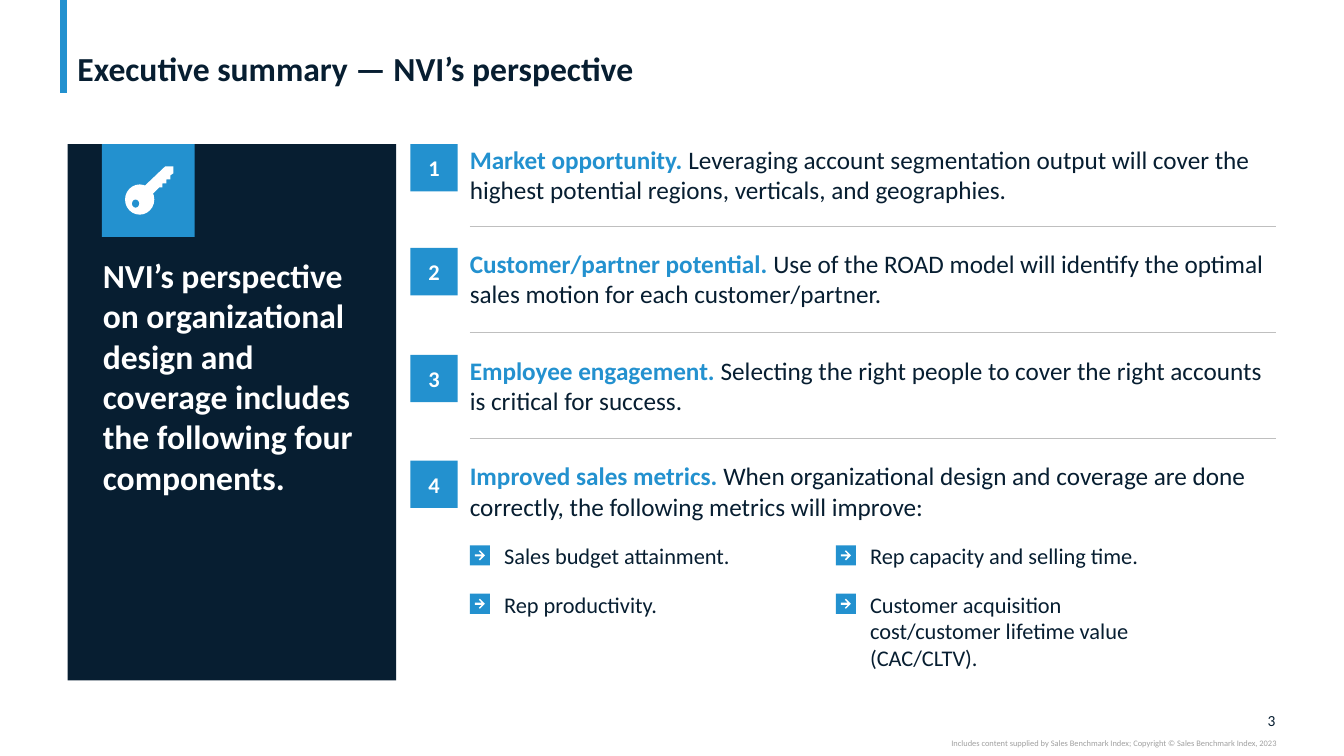
from lxml.etree import SubElement
from pptx import Presentation
from pptx.dml.color import RGBColor
from pptx.enum.shapes import MSO_CONNECTOR, MSO_SHAPE
from pptx.enum.text import MSO_ANCHOR, PP_ALIGN
from pptx.oxml.ns import qn
from pptx.util import Pt

PX = 9144  # EMU per px, 100 px to the inch
COLORS = {"navy": "071E31", "blue": "2391CF", "white": "FFFFFF",
          "rule": "BFBFBF", "gray": "A0A0A0"}


class Deck:
    font = "Calibri"

    def __init__(self, width, height):
        self.prs = Presentation()
        self.prs.slide_width, self.prs.slide_height = width * PX, height * PX
        self.s = self.prs.slides.add_slide(self.prs.slide_layouts[6])

    def color(self, name):
        return RGBColor.from_string(COLORS[name])

    def paint(self, sp, fill):
        sp.shadow.inherit = False
        sp.fill.solid()
        sp.fill.fore_color.rgb = self.color(fill)
        sp.line.fill.background()
        return sp

    def shape(self, x, y, w, h, fill, kind=MSO_SHAPE.RECTANGLE):
        box = (v * PX for v in (x, y, w, h))
        return self.paint(self.s.shapes.add_shape(kind, *box), fill)

    def outline(self, x, y, points, fill):
        points = [(x + dx, y + dy) for dx, dy in points]
        builder = self.s.shapes.build_freeform(*points[0], scale=PX)
        builder.add_line_segments(points[1:], close=True)
        return self.paint(builder.convert_to_shape(), fill)

    def line(self, x1, y1, x2, y2, color, width):
        ends = (v * PX for v in (x1, y1, x2, y2))
        cn = self.s.shapes.add_connector(MSO_CONNECTOR.STRAIGHT, *ends)
        cn.line.color.rgb = self.color(color)
        cn.line.width = Pt(width)
        SubElement(cn._element.spPr, qn("a:effectLst"))

    def label(self, sp, runs, size, align=PP_ALIGN.LEFT, anchor=MSO_ANCHOR.TOP,
              insets=(0, 0, 0, 0)):
        """Fill a shape with runs of (text, color, bold)."""
        tf = sp.text_frame
        tf.word_wrap = True
        tf.vertical_anchor = anchor
        (tf.margin_left, tf.margin_top,
         tf.margin_right, tf.margin_bottom) = (v * PX for v in insets)
        p = tf.paragraphs[0]
        p.alignment = align
        for text, color, bold in runs:
            r = p.add_run()
            r.text = text
            r.font.name, r.font.size, r.font.bold = self.font, Pt(size), bold
            r.font.color.rgb = self.color(color)
        return p

    def text(self, x, y, w, h, runs, size, **style):
        sp = self.s.shapes.add_textbox(*(v * PX for v in (x, y, w, h)))
        return self.label(sp, runs, size, **style)


LEFT, TOP, TEXT_X, RIGHT = 67, 143, 466, 1266
POINTS = [
    (143, "Market opportunity. ", "Leveraging account segmentation output will "
     "cover the highest potential regions, verticals, and geographies."),
    (246, "Customer/partner potential. ", "Use of the ROAD model will identify "
     "the optimal sales motion for each customer/partner."),
    (352, "Employee engagement. ", "Selecting the right people to cover the "
     "right accounts is critical for success."),
    (457, "Improved sales metrics. ", "When organizational design and coverage "
     "are done correctly, the following metrics will improve:"),
]
METRICS = [
    ["Sales budget attainment.", "Rep productivity."],
    ["Rep capacity and selling time.",
     "Customer acquisition cost/customer lifetime value (CAC/CLTV)."],
]
ARROW = [(0, 4), (7, 4), (4, 1), (5, 0), (10, 5), (5, 10), (4, 9), (7, 6), (0, 6)]
KEY_SHAFT = [(14, 33), (28, 27), (34, 21), (37, 21), (37, 17), (41, 17), (41, 13),
             (45, 13), (45, 9), (48, 7), (48, 0), (40, 0), (20, 19)]


def main():
    d = Deck(1333, 750)

    # Title and footer
    d.line(63, 0, 63, 92, "blue", 5)
    title = d.text(LEFT, 4, 1199, 84,
                   [("Executive summary — NVI’s perspective", "navy", True)], 24,
                   anchor=MSO_ANCHOR.BOTTOM, insets=(10, 0, 10, 0))
    title.line_spacing = 0.9
    d.text(1232, 705, 33, 19, [("3", "navy", False)], 11,
           align=PP_ALIGN.RIGHT, anchor=MSO_ANCHOR.MIDDLE)
    d.text(750, 732, 516, 10,
           [("Includes content supplied by Sales Benchmark Index; "
             "Copyright © Sales Benchmark Index, 2023", "gray", False)], 6,
           align=PP_ALIGN.RIGHT)

    # Side panel with key icon
    panel = d.shape(LEFT, TOP, 326, 532, "navy")
    d.label(panel, [("NVI’s perspective on organizational design and coverage "
                     "includes the following four components.", "white", True)],
            24, insets=(35, 110, 35, 8))
    d.shape(101, TOP, 92, 92, "blue")
    d.shape(124, 183, 29, 30, "white", MSO_SHAPE.OVAL)
    d.outline(124, 165, KEY_SHAFT, "white")
    d.shape(131, 198, 7, 8, "blue", MSO_SHAPE.OVAL)

    # Numbered points
    for number, (y, lead, body) in enumerate(POINTS, 1):
        d.text(TEXT_X, y, 800, 61,
               [(lead, "blue", True), (body, "navy", False)], 18)
        d.label(d.shape(407, y, 47, 47, "blue"), [(str(number), "white", True)],
                16, align=PP_ALIGN.CENTER, anchor=MSO_ANCHOR.MIDDLE)

    # Rules between the points
    for i in range(len(POINTS) - 1):
        y = 225 + 105 * i
        d.line(TEXT_X, y, RIGHT, y, "rule", 0.5)

    # Metrics with arrow markers
    for col, metrics in enumerate(METRICS):
        for row, metric in enumerate(metrics):
            x, y = TEXT_X + 363 * col, 541 + 48 * row
            d.shape(x, y, 20, 20, "blue")
            d.outline(x + 5, y + 5, ARROW, "white")
            d.text(x + 34, y - 3, 306, 27, [(metric, "navy", False)], 16)

    d.prs.save("out.pptx")


if __name__ == "__main__":
    main()
